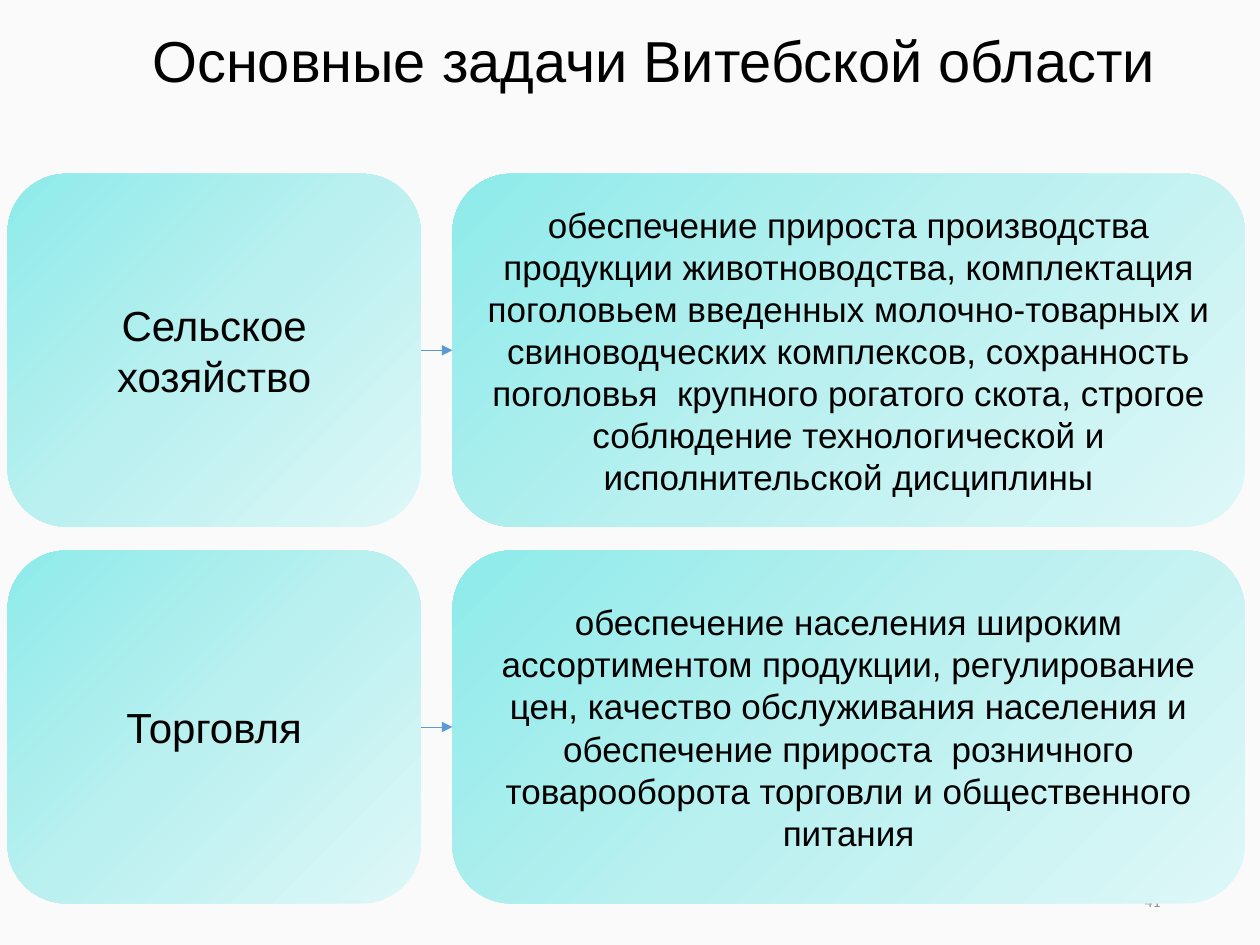
from lxml import etree
from pptx import Presentation
from pptx.dml.color import RGBColor
from pptx.enum.shapes import MSO_CONNECTOR as Link, MSO_SHAPE as Form
from pptx.enum.text import MSO_ANCHOR as Anchor, MSO_AUTO_SIZE as Fit, PP_ALIGN as Align
from pptx.oxml import parse_xml
from pptx.oxml.ns import nsdecls, qn
from pptx.util import Inches, Pt

TITLE = "Основные задачи Витебской области"
PAGE = "41"
TASKS = [
    ("Сельское хозяйство",
     "обеспечение прироста производства продукции животноводства, "
     "комплектация поголовьем введенных молочно-товарных и свиноводческих "
     "комплексов, сохранность поголовья  крупного рогатого скота, строгое "
     "соблюдение технологической и исполнительской дисциплины"),
    ("Торговля",
     "обеспечение населения широким ассортиментом продукции, регулирование "
     "цен, качество обслуживания населения и обеспечение прироста  розничного "
     "товарооборота торговли и общественного питания"),
]
STOPS = [(0, "8EEBEA"), (50, "BBF0F0"), (100, "DEF7F7")]
COLS = [(0.06, 3.28, 24), (3.59, 6.29, 20)]
TOP, HIGH, STEP = 1.38, 2.8, 2.99


def tint(color, code):
    color.rgb = RGBColor.from_string(code)


def write(shape, text, size, face="Arial", code="000000", align=Align.CENTER):
    frame = shape.text_frame
    frame.text = text
    frame.word_wrap = True
    frame.auto_size = Fit.NONE
    frame.vertical_anchor = Anchor.MIDDLE
    para = frame.paragraphs[0]
    para.alignment = align
    para.font.size = Pt(size)
    para.font.name = face
    tint(para.font.color, code)
    return para


def blend(shape):
    shape.fill.background()
    stops = "".join(
        f'<a:gs pos="{pos * 1000}"><a:srgbClr val="{code}"/></a:gs>'
        for pos, code in STOPS)
    grad = parse_xml(
        f'<a:gradFill {nsdecls("a")} rotWithShape="1"><a:gsLst>{stops}</a:gsLst>'
        '<a:path path="circle"><a:fillToRect r="100000" b="100000"/></a:path>'
        '</a:gradFill>')
    props = shape.element.spPr
    props.replace(props.find(qn("a:noFill")), grad)


def add_card(slide, text, col, top):
    left, width, size = col
    card = slide.shapes.add_shape(
        Form.ROUNDED_RECTANGLE, Inches(left), Inches(top), Inches(width), Inches(HIGH))
    card.shadow.inherit = False
    blend(card)
    card.line.fill.background()
    write(card, text, size)
    return card


def add_arrow(slide, start, end):
    arrow = slide.shapes.add_connector(Link.STRAIGHT, 0, 0, 0, 0)
    arrow.begin_connect(start, 3)
    arrow.end_connect(end, 1)
    arrow.line.width = Pt(0.5)
    tint(arrow.line.color, "5B9BD5")
    props = arrow.element.spPr
    etree.SubElement(props.find(qn("a:ln")), qn("a:tailEnd"), type="triangle")
    etree.SubElement(props, qn("a:effectLst"))


def main():
    deck = Presentation()
    deck.slide_width, deck.slide_height = Inches(10), Inches(7.5)
    slide = deck.slides.add_slide(deck.slide_layouts[5])
    slide.background.fill.solid()
    tint(slide.background.fill.fore_color, "FAFAFA")

    title = slide.shapes.title
    title.left, title.top = Inches(0.19), Inches(0.23)
    title.width, title.height = Inches(10), Inches(0.59)
    write(title, TITLE, 33).line_spacing = 0.8

    page = slide.shapes.add_textbox(Inches(7.06), Inches(6.95), Inches(2.25), Inches(0.4))
    write(page, PAGE, 9, "Calibri", "8C8C8C", Align.RIGHT)

    for row, texts in enumerate(TASKS):
        top = TOP + row * STEP
        name, task = [add_card(slide, text, col, top) for text, col in zip(texts, COLS)]
        add_arrow(slide, name, task)

    deck.save("out.pptx")


if __name__ == "__main__":
    main()
